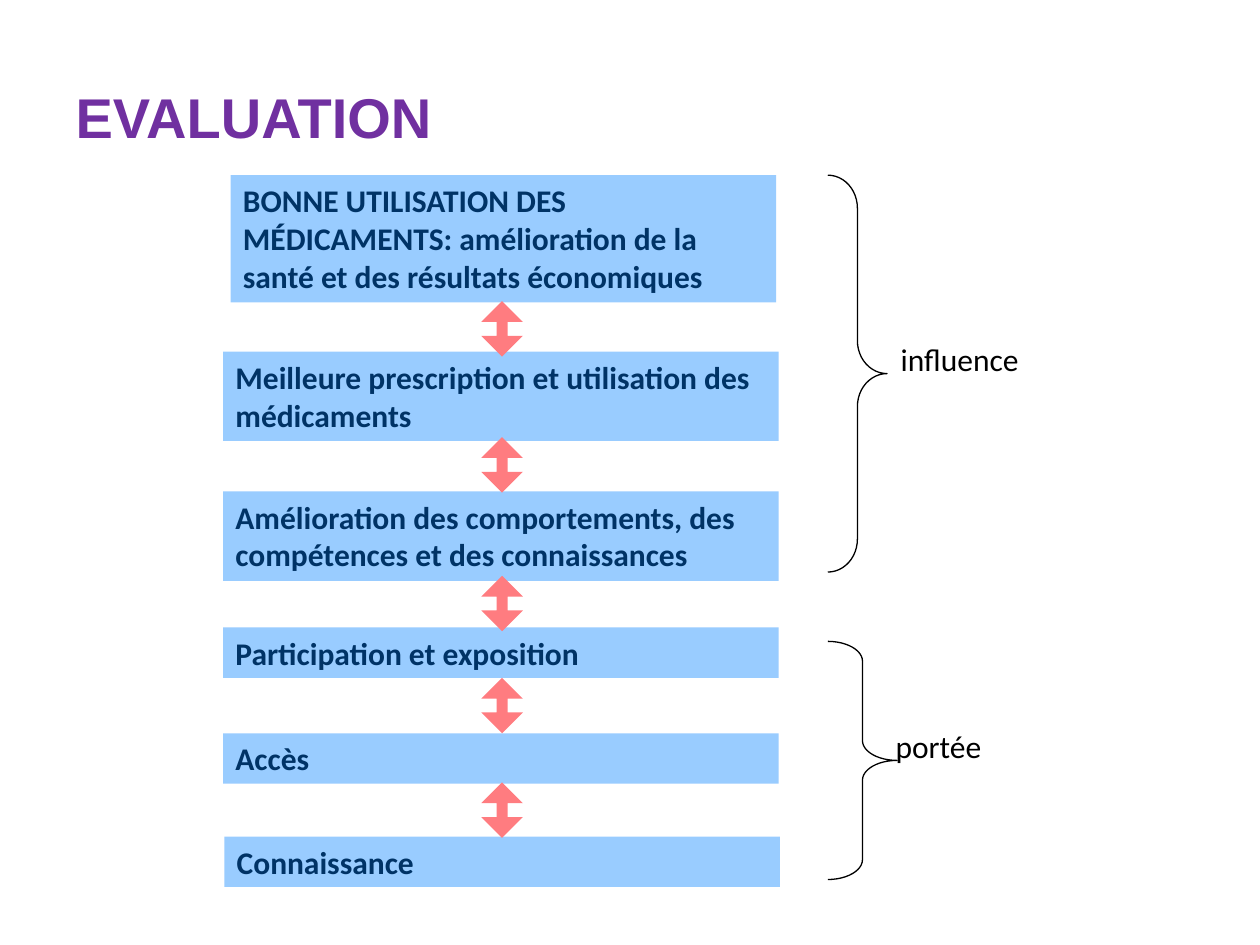
"""Build the evaluation slide: a ladder of outcomes grouped into influence and reach."""
from pptx import Presentation
from pptx.dml.color import RGBColor
from pptx.enum.shapes import MSO_SHAPE
from pptx.enum.text import MSO_ANCHOR, PP_ALIGN
from pptx.util import Inches, Pt

COLORS = {name: RGBColor.from_string(value) for name, value in {
    "title": "7030A0", "step": "99CCFF", "step_text": "003366",
    "arrow": "FF7C80", "black": "000000"}.items()}


def add_plain_shape(kind, left, top, width, height, fill=None):
    shape = page.shapes.add_shape(
        kind, Inches(left), Inches(top), Inches(width), Inches(height))
    shape.shadow.inherit = False
    if fill:
        shape.fill.solid()
        shape.fill.fore_color.rgb = COLORS[fill]
        shape.line.fill.background()
    else:
        shape.fill.background()
        shape.line.color.rgb = COLORS["black"]
        shape.line.width = Pt(0.75)
    return shape


def write_text(shape, text, font, size, color, bold, anchor=MSO_ANCHOR.TOP):
    frame = shape.text_frame
    frame.text = text
    frame.word_wrap = True
    frame.vertical_anchor = anchor
    para = frame.paragraphs[0]
    para.alignment = PP_ALIGN.LEFT
    span = para.runs[0]
    span.font.name = font
    span.font.size = Pt(size)
    span.font.bold = bold
    span.font.color.rgb = COLORS[color]
    return para


deck = Presentation()
deck.slide_width, deck.slide_height = Inches(10), Inches(7.5)
page = deck.slides.add_slide(deck.slide_layouts[5])

title = page.shapes.title
title.left, title.top = Inches(0.5), Inches(0.56)
title.width, title.height = Inches(9), Inches(0.93)
heading = write_text(title, "EVALUATION", "Arial", 32, "title", True, MSO_ANCHOR.MIDDLE)
heading.line_spacing = Pt(23)

steps = [
    ("BONNE UTILISATION DES MÉDICAMENTS: amélioration de la santé et des résultats économiques",
     1.83, 1.39, 4.33, 1.01),
    ("Meilleure prescription et utilisation des médicaments", 1.77, 2.79, 4.41, 0.71),
    ("Amélioration des comportements, des compétences et des connaissances",
     1.77, 3.9, 4.41, 0.71),
    ("Participation et exposition", 1.77, 4.98, 4.41, 0.4),
    ("Accès", 1.77, 5.82, 4.41, 0.4),
    ("Connaissance", 1.78, 6.64, 4.41, 0.4),
]
for text, *place in steps:
    step = add_plain_shape(MSO_SHAPE.RECTANGLE, *place, fill="step")
    write_text(step, text, "Calibri", 18, "step_text", True)

for top in (2.39, 3.47, 4.57, 5.38, 6.21):
    arrow = add_plain_shape(MSO_SHAPE.UP_DOWN_ARROW, 3.82, top, 0.33, 0.44, fill="arrow")
    arrow.adjustments[0] = 0.5
    arrow.adjustments[1] = 0.265

for top, width, height, curve in ((1.39, 0.47, 3.15, 0.556), (5.09, 0.55, 1.89, 0.286)):
    brace = add_plain_shape(MSO_SHAPE.RIGHT_BRACE, 6.57, top, width, height)
    brace.adjustments[0] = curve
    brace.adjustments[1] = 0.5

for text, *place in (("influence", 7.05, 2.65, 1.97, 0.57), ("portée", 7.01, 5.72, 1.5, 0.4)):
    label = page.shapes.add_textbox(*map(Inches, place))
    write_text(label, text, "Calibri", 18, "black", False)

deck.save("out.pptx")
